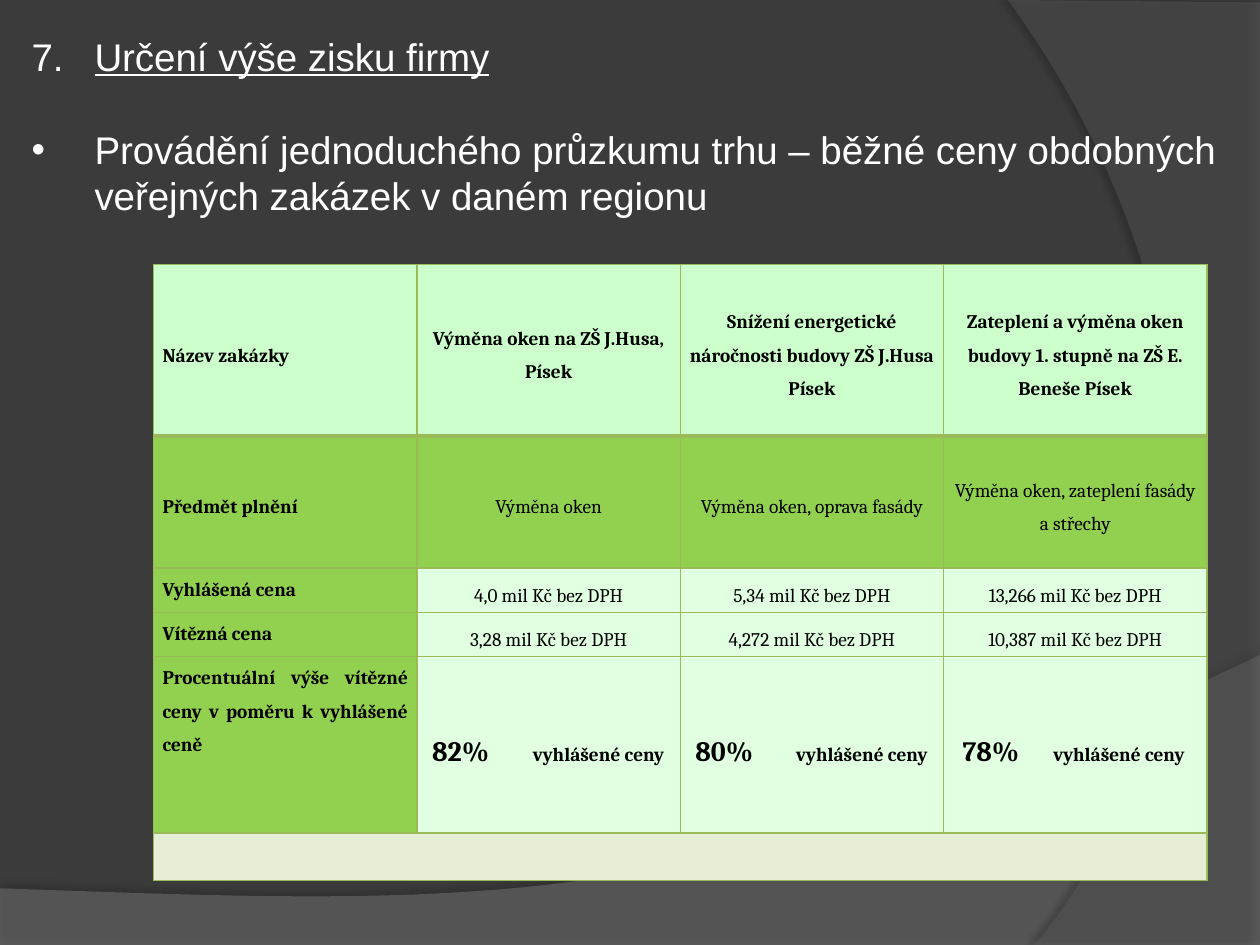
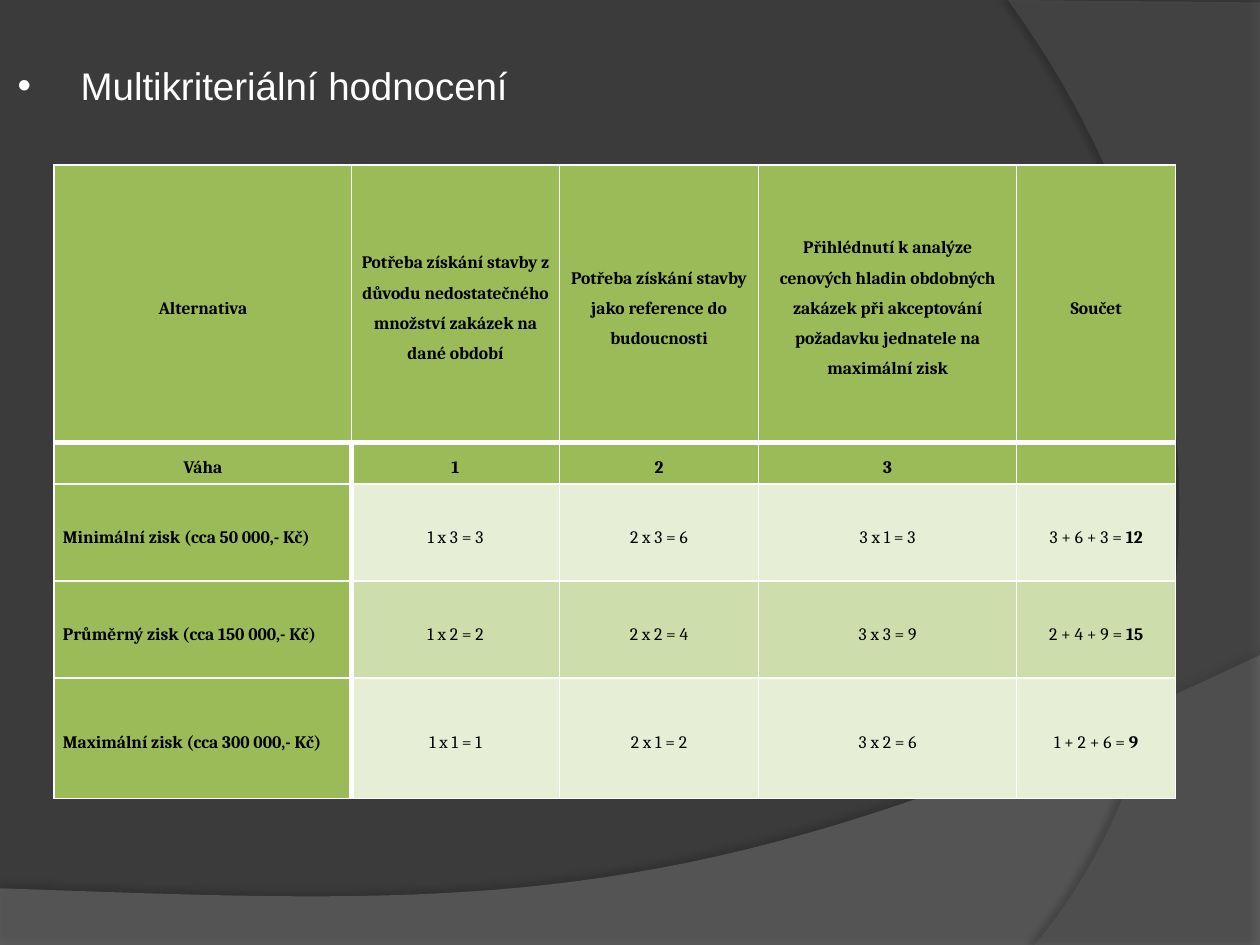
from pptx import Presentation
from pptx.dml.color import RGBColor
from pptx.enum.text import MSO_ANCHOR, MSO_AUTO_SIZE, PP_ALIGN
from pptx.oxml.ns import qn
from pptx.util import Inches, Pt
from lxml.etree import SubElement

WHITE = RGBColor(0xFF, 0xFF, 0xFF)
BLACK = RGBColor(0x00, 0x00, 0x00)
BACKGROUND = RGBColor(0x3B, 0x3B, 0x3B)
WAVE_GRAY = RGBColor(0x7F, 0x7F, 0x7F)
ARC_GRAY = RGBColor(0x5E, 0x5E, 0x5E)
OLIVE = RGBColor(0x9B, 0xBB, 0x59)
PALE_OLIVE = RGBColor(0xE6, 0xEE, 0xD5)
SOFT_OLIVE = RGBColor(0xCD, 0xDD, 0xAC)
MINT = RGBColor(0xCC, 0xFF, 0xCC)
PALE_MINT = RGBColor(0xE1, 0xFF, 0xE1)
LIME = RGBColor(0x92, 0xD0, 0x50)

WIDTH, HEIGHT = 10, 7.5
HEADING_FONT, TABLE_FONT = "Arial", "Cambria"
CURVE_STEPS = 40

PROFIT_TITLE = "Určení výše zisku firmy"
PROFIT_NOTE = ("Provádění jednoduchého průzkumu trhu – běžné ceny obdobných "
               "veřejných zakázek v daném regionu")
CONTRACTS = [
    ["Název zakázky", "Výměna oken na ZŠ J.Husa, Písek",
     "Snížení energetické náročnosti budovy ZŠ J.Husa Písek",
     "Zateplení a výměna oken budovy 1. stupně na ZŠ E. Beneše Písek"],
    ["Předmět plnění", "Výměna oken", "Výměna oken, oprava fasády",
     "Výměna oken, zateplení fasády a střechy"],
    ["Vyhlášená cena", "4,0 mil Kč bez DPH", "5,34 mil Kč bez DPH", "13,266 mil Kč bez DPH"],
    ["Vítězná cena", "3,28 mil Kč bez DPH", "4,272 mil Kč bez DPH", "10,387 mil Kč bez DPH"],
    ["Procentuální výše vítězné ceny v poměru k vyhlášené ceně",
     "82%\t|vyhlášené ceny", "80%\t|vyhlášené ceny", "78%\t|vyhlášené ceny"],
    ["", "", "", ""],
]
CONTRACT_COLUMNS = [2.09] * 4
CONTRACT_ROWS = [1.36, 1.05, 0.35, 0.35, 1.4, 0.38]
PERCENT_ROW = 4
PERCENT_LAYOUT = [(0.12, 0.8), (0.12, 0.8), (0.15, 0.72)]

CRITERIA_TITLE = "Multikriteriální hodnocení"
CRITERIA = [
    ["Alternativa",
     "Potřeba získání stavby z důvodu nedostatečného množství zakázek na dané období",
     "Potřeba získání stavby jako reference do budoucnosti",
     "Přihlédnutí k analýze cenových hladin obdobných zakázek při akceptování "
     "požadavku jednatele na maximální zisk",
     "Součet"],
    ["Váha", "1", "2", "3", ""],
    ["Minimální zisk (cca 50 000,- Kč)", "1 x 3 = 3", "2 x 3 = 6", "3 x 1 = 3", "3 + 6 + 3 = |12"],
    ["Průměrný zisk (cca 150 000,- Kč)", "1 x 2 = 2", "2 x 2 = 4", "3 x 3 = 9", "2 + 4 + 9 = |15"],
    ["Maximální zisk (cca 300 000,- Kč)", "1 x 1 = 1", "2 x 1 = 2", "3 x 2 = 6", "1 + 2 + 6 = |9"],
]
CRITERIA_COLUMNS = [2.36, 1.65, 1.58, 2.05, 1.26]
CRITERIA_ROWS = [2.2, 0.33, 0.77, 0.77, 0.96]


def bezier(points):
    for step in range(1, CURVE_STEPS + 1):
        t = step / CURVE_STEPS
        weights = [(1 - t) ** 3, 3 * t * (1 - t) ** 2, 3 * t * t * (1 - t), t ** 3]
        yield tuple(sum(w * point[axis] for w, point in zip(weights, points)) for axis in (0, 1))


WAVE = [(0, 7.05), (0, HEIGHT), (WIDTH, HEIGHT), (WIDTH, 5.2),
        *bezier([(WIDTH, 5.2), (5.59, 7.29), (3.91, 7.19), (0, 7.05)])]
ARC = [(WIDTH, 0.02), (WIDTH, HEIGHT), (8.21, HEIGHT),
       *bezier([(8.21, HEIGHT), (9.35, 6.19), (10.18, 3), (8, 0)])]
BACKDROP = [(WAVE, WAVE_GRAY, 45, 35, 3.5, 270), (ARC, ARC_GRAY, 40, 45, 4, 180)]


def add_backdrop(presentation, slide):
    master = presentation.slide_master
    master.background.fill.solid()
    master.background.fill.fore_color.rgb = BACKGROUND
    for index, (outline, color, opacity, shade, distance, angle) in enumerate(BACKDROP):
        points = [(Inches(x), Inches(y)) for x, y in outline]
        builder = slide.shapes.build_freeform(*points[0], scale=1.0)
        builder.add_line_segments(points[1:], close=True)
        shape = builder.convert_to_shape()
        shape.fill.solid()
        shape.fill.fore_color.rgb = color
        shape.line.fill.background()
        properties = shape.element.spPr
        fill_color = properties.find(qn("a:solidFill")).find(qn("a:srgbClr"))
        SubElement(fill_color, qn("a:alpha"), val=str(opacity * 1000))
        shape.shadow.inherit = False
        shadow = SubElement(properties.find(qn("a:effectLst")), qn("a:outerShdw"),
                            blurRad=str(Pt(4)), dist=str(Pt(distance)),
                            dir=str(angle * 60000), algn="ctr", rotWithShape="0")
        shadow_color = SubElement(shadow, qn("a:srgbClr"), val="000000")
        SubElement(shadow_color, qn("a:alpha"), val=str(shade * 1000))
        shape.element.nvSpPr.cNvPr.set("id", str(20 + index))
        master.element.cSld.spTree.insert(2 + index, shape.element)


def write_heading(placeholder, text, left, top, height, number=None, underline=False):
    placeholder.left, placeholder.top = Inches(left), Inches(top)
    placeholder.width, placeholder.height = Inches(9.61), Inches(height)
    frame = placeholder.text_frame
    frame.text = text
    frame.word_wrap = True
    frame.auto_size = MSO_AUTO_SIZE.NONE
    frame.vertical_anchor = MSO_ANCHOR.TOP
    paragraph = frame.paragraphs[0]
    paragraph.alignment = PP_ALIGN.LEFT
    paragraph.space_before = Pt(0)
    properties = paragraph._p.get_or_add_pPr()
    properties.set("marL", str(Inches(0.5)))
    properties.set("indent", str(Inches(-0.5)))
    SubElement(properties, qn("a:buFont"), typeface=HEADING_FONT)
    if number:
        SubElement(properties, qn("a:buAutoNum"), type="arabicPeriod", startAt=str(number))
    else:
        SubElement(properties, qn("a:buChar"), char="•")
    font = paragraph.runs[0].font
    font.name, font.size, font.underline = HEADING_FONT, Pt(22), underline
    font.color.rgb = WHITE


def set_borders(cell, color, widths):
    properties = cell._tc.get_or_add_tcPr()
    for side in "LRTB":
        line = SubElement(properties, qn(f"a:ln{side}"), w=str(Pt(widths.get(side, 1))))
        SubElement(SubElement(line, qn("a:solidFill")), qn("a:srgbClr"), val=str(color))


def write_cell(cell, text, size, bold, alignment):
    cell.margin_left = cell.margin_right = Inches(0.07)
    cell.margin_top = cell.margin_bottom = 0
    cell.vertical_anchor = MSO_ANCHOR.MIDDLE
    paragraph = cell.text_frame.paragraphs[0]
    paragraph.alignment = alignment
    paragraph.line_spacing = 1.5
    for part in text.split("|") if text else []:
        run = paragraph.add_run()
        run.text = part
        run.font.name, run.font.size, run.font.bold = TABLE_FONT, Pt(size), bold
        run.font.color.rgb = BLACK
    if not text:
        paragraph.font.size = Pt(size)


def add_grid(slide, rows, left, top, columns, heights, size, border, widths, fill, bold, alignment):
    frame = slide.shapes.add_table(len(rows), len(columns), Inches(left), Inches(top),
                                   Inches(sum(columns)), Inches(sum(heights)))
    table = frame.table
    table.first_row = table.horz_banding = False
    for column, width in zip(table.columns, columns):
        column.width = Inches(width)
    for row, height in zip(table.rows, heights):
        row.height = Inches(height)
    for r, row in enumerate(rows):
        for c, text in enumerate(row):
            cell = table.cell(r, c)
            write_cell(cell, text, size, bold(r, c), alignment(r, c))
            set_borders(cell, border, widths(r, c))
            cell.fill.solid()
            cell.fill.fore_color.rgb = fill(r, c)
    return table


def header_rule(row, width):
    return {0: {"B": width}, 1: {"T": width}}.get(row, {})


def contract_fill(row, column):
    if row == 0:
        return MINT
    if row == len(CONTRACTS) - 1:
        return PALE_OLIVE
    return LIME if row == 1 or column == 0 else PALE_MINT


def criteria_borders(row, column):
    widths = dict(header_rule(row, 3))
    if row > 0 and column < 2:
        widths["R" if column == 0 else "L"] = 3
    return widths


def criteria_fill(row, column):
    if row < 2 or column == 0:
        return OLIVE
    return SOFT_OLIVE if row % 2 else PALE_OLIVE


def fill_profit_slide(slide):
    write_heading(slide.shapes.title, PROFIT_TITLE, 0.15, 0.21, 0.47, number=7, underline=True)
    write_heading(slide.placeholders[1], PROFIT_NOTE, 0.15, 0.95, 0.85)
    table = add_grid(
        slide, CONTRACTS, 1.22, 2.1, CONTRACT_COLUMNS, CONTRACT_ROWS, 11, OLIVE,
        widths=lambda r, c: header_rule(r, 2.25),
        fill=contract_fill,
        bold=lambda r, c: r in (0, PERCENT_ROW) or c == 0,
        alignment=lambda r, c: PP_ALIGN.CENTER if c else PP_ALIGN.JUSTIFY)
    for row in range(2, PERCENT_ROW + 1):
        table.cell(row, 0).vertical_anchor = MSO_ANCHOR.TOP
    for column, (margin, tab) in enumerate(PERCENT_LAYOUT, start=1):
        cell = table.cell(PERCENT_ROW, column)
        cell.margin_left = Inches(margin)
        paragraph = cell.text_frame.paragraphs[0]
        paragraph.alignment = PP_ALIGN.LEFT
        tabs = SubElement(paragraph._p.get_or_add_pPr(), qn("a:tabLst"))
        SubElement(tabs, qn("a:tab"), pos=str(Inches(tab)), algn="l")
        paragraph.runs[0].font.size = Pt(16)
    last = len(CONTRACTS) - 1
    table.cell(last, 0).merge(table.cell(last, len(CONTRACT_COLUMNS) - 1))


def fill_criteria_slide(slide):
    write_heading(slide.shapes.title, CRITERIA_TITLE, 0.04, 0.44, 0.47)
    table = add_grid(
        slide, CRITERIA, 0.43, 1.31, CRITERIA_COLUMNS, CRITERIA_ROWS, 10, WHITE,
        widths=criteria_borders,
        fill=criteria_fill,
        bold=lambda r, c: r < 2 or c == 0,
        alignment=lambda r, c: PP_ALIGN.LEFT if r > 1 and c == 0 else PP_ALIGN.CENTER)
    for row in range(2, len(CRITERIA)):
        total = table.cell(row, len(CRITERIA_COLUMNS) - 1)
        total.text_frame.paragraphs[0].runs[-1].font.bold = True


def main():
    presentation = Presentation()
    presentation.slide_width, presentation.slide_height = Inches(WIDTH), Inches(HEIGHT)
    title_and_content, title_only = (presentation.slide_layouts[i] for i in (1, 5))
    profit_slide = presentation.slides.add_slide(title_and_content)
    add_backdrop(presentation, profit_slide)
    fill_profit_slide(profit_slide)
    fill_criteria_slide(presentation.slides.add_slide(title_only))
    presentation.save("out.pptx")


if __name__ == "__main__":
    main()
